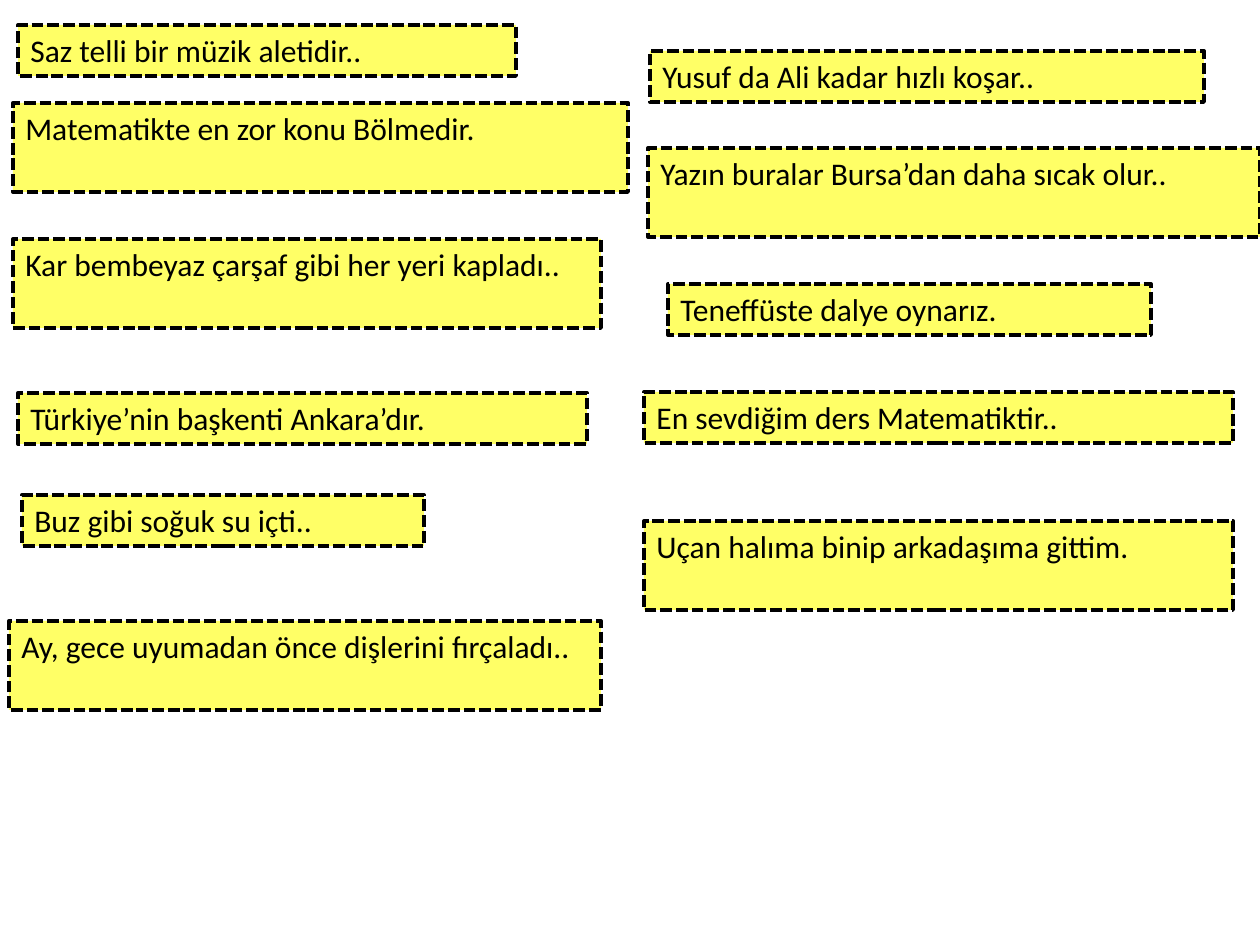
import pptx
import pptx.dml.color
import pptx.enum.dml
import pptx.enum.text
import pptx.util

PX = 914400 / 126  # EMU in one px
SLIDE_WIDTH, SLIDE_HEIGHT = 1260, 945
COLUMN_WIDTH = SLIDE_WIDTH // 2
SHORT, TALL = 51, 89  # card heights

YELLOW = pptx.dml.color.RGBColor(0xFF, 0xFF, 0x66)
BLACK = pptx.dml.color.RGBColor(0x00, 0x00, 0x00)

# Each sentence: left and top within its column, width, height, wording
LEFT_SENTENCES = [
    (18, 25, 498, SHORT, "Saz telli bir müzik aletidir.."),
    (13, 103, 615, TALL, "Matematikte en zor konu Bölmedir."),
    (13, 239, 588, TALL, "Kar bembeyaz çarşaf gibi her yeri kapladı.."),
    (18, 393, 569, SHORT, "Türkiye’nin başkenti Ankara’dır."),
    (22, 495, 402, SHORT, "Buz gibi soğuk su içti.."),
    (9, 621, 592, TALL, "Ay, gece uyumadan önce dişlerini fırçaladı.."),
]
RIGHT_SENTENCES = [
    (20, 51, 554, SHORT, "Yusuf da Ali kadar hızlı koşar.."),
    (18, 148, 612, TALL, "Yazın buralar Bursa’dan daha sıcak olur.."),
    (38, 284, 483, SHORT, "Teneffüste dalye oynarız."),
    (14, 392, 589, SHORT, "En sevdiğim ders Matematiktir.."),
    (14, 521, 589, TALL, "Uçan halıma binip arkadaşıma gittim."),
]


def px(length):
    return pptx.util.Emu(round(length * PX))


def add_card(slide, left, top, width, height, sentence):
    """Place one yellow card with a dashed border."""
    card = slide.shapes.add_textbox(px(left), px(top), px(width), px(height))
    card.fill.solid()
    card.fill.fore_color.rgb = YELLOW
    card.line.color.rgb = BLACK
    card.line.width = pptx.util.Pt(2.25)
    card.line.dash_style = pptx.enum.dml.MSO_LINE.SQUARE_DOT  # sysDash

    frame = card.text_frame
    frame.word_wrap = True
    frame.auto_size = pptx.enum.text.MSO_AUTO_SIZE.NONE
    frame.text = sentence
    font = frame.paragraphs[0].runs[0].font
    font.name = "Calibri"
    font.size = pptx.util.Pt(18)
    font.color.rgb = BLACK


def add_column(slide, column_left, column_top, sentences):
    """Place a column of cards relative to its top left corner."""
    for left, top, width, height, sentence in sentences:
        add_card(slide, column_left + left, column_top + top,
                 width, height, sentence)


def main():
    deck = pptx.Presentation()
    deck.slide_width = px(SLIDE_WIDTH)
    deck.slide_height = px(SLIDE_HEIGHT)
    slide = deck.slides.add_slide(deck.slide_layouts[6])  # blank layout

    add_column(slide, 0, 0, LEFT_SENTENCES)
    add_column(slide, COLUMN_WIDTH, 0, RIGHT_SENTENCES)

    deck.save("out.pptx")


if __name__ == "__main__":
    main()
